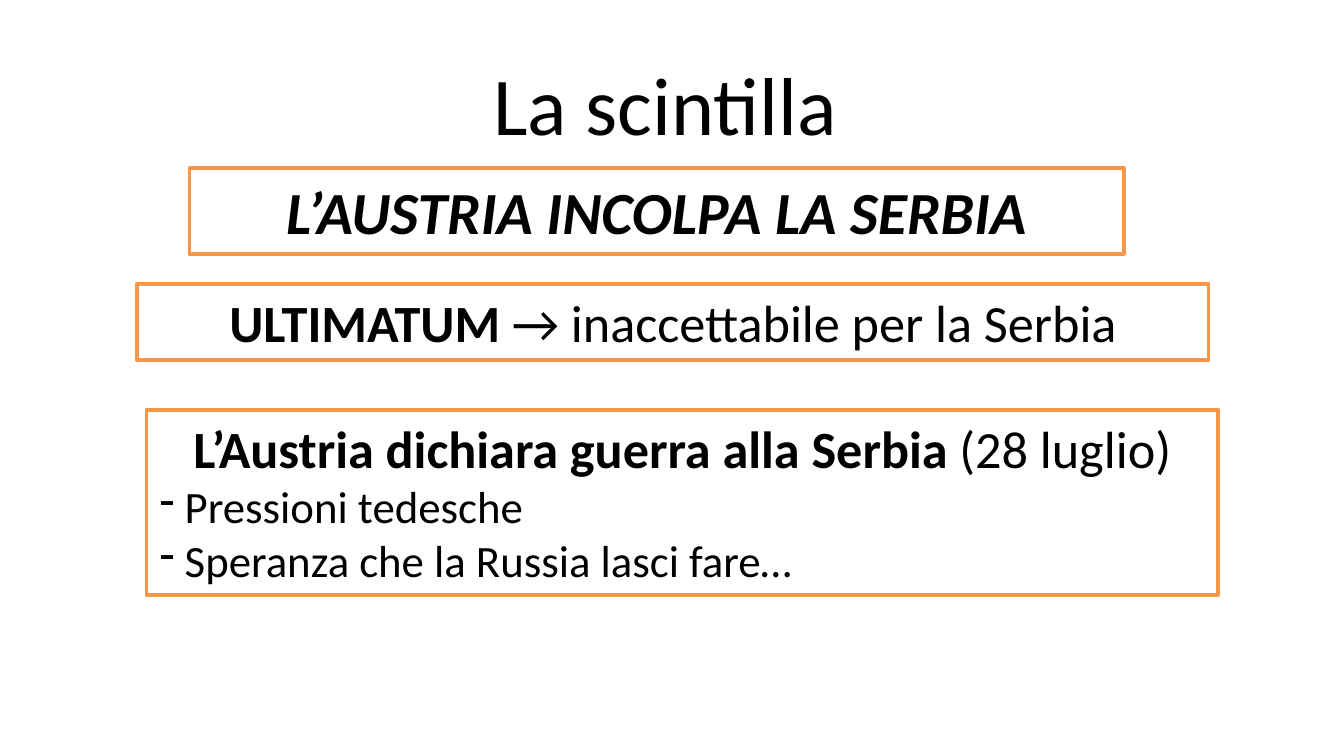
"""Build the slide "La scintilla": a title over three framed statements."""
from dataclasses import dataclass

import pptx
import pptx.dml.color
import pptx.enum.shapes
import pptx.enum.text
import pptx.oxml.ns
import pptx.slide
import pptx.text.text
import pptx.util
from lxml import etree

Pt = pptx.util.Pt
Align = pptx.enum.text.PP_ALIGN
Anchor = pptx.enum.text.MSO_ANCHOR
Fit = pptx.enum.text.MSO_AUTO_SIZE
BLACK = pptx.dml.color.RGBColor(0x00, 0x00, 0x00)
WHITE = pptx.dml.color.RGBColor(0xFF, 0xFF, 0xFF)
ORANGE = pptx.dml.color.RGBColor(0xF7, 0x96, 0x46)


@dataclass(frozen=True)
class Run:
    text: str
    size: float
    bold: bool = False
    italic: bool = False


@dataclass(frozen=True)
class Line:
    runs: tuple[Run, ...]
    dash: bool = False


@dataclass(frozen=True)
class Box:
    left: float
    top: float
    width: float
    height: float
    lines: tuple[Line, ...]


TITLE = Box(50.4, 11.5, 612, 87, (Line((Run("La scintilla", 44),)),))
FRAMES = (
    Box(101.5, 90, 500.5, 46, (
        Line((Run("L’AUSTRIA INCOLPA LA SERBIA", 32, True, True),)),
    )),
    Box(73.5, 152, 574, 41, (
        Line((Run("ULTIMATUM ", 28, True),
              Run("→ inaccettabile per la Serbia", 28))),
    )),
    Box(78.5, 219.5, 574, 99.5, (
        Line((Run("L’Austria dichiara guerra alla Serbia ", 28, True),
              Run("(28 luglio)", 28))),
        Line((Run(" Pressioni tedesche", 24),), True),
        Line((Run(" Speranza che la Russia lasci fare…", 24),), True),
    )),
)


def add_dash(para: pptx.text.text._Paragraph) -> None:
    """Give a paragraph a dash as its bullet."""
    props = para._p.get_or_add_pPr()
    mark = etree.SubElement(props, pptx.oxml.ns.qn("a:buChar"))
    mark.set("char", "-")


def write(frame: pptx.text.text.TextFrame, lines: tuple[Line, ...]) -> None:
    """Fill a text frame with formatted lines."""
    frame.word_wrap = True
    for index, line in enumerate(lines):
        para = frame.add_paragraph() if index else frame.paragraphs[0]
        para.alignment = Align.JUSTIFY if line.dash else Align.CENTER
        if line.dash:
            add_dash(para)
        for part in line.runs:
            run = para.add_run()
            run.text = part.text
            run.font.color.rgb = BLACK
            style = {"name": "Calibri", "size": Pt(part.size),
                     "bold": part.bold, "italic": part.italic}
            for key, value in style.items():
                setattr(run.font, key, value)


def area(box: Box) -> tuple[int, ...]:
    """Return the place and size of a box as lengths."""
    return tuple(Pt(n) for n in (box.left, box.top, box.width, box.height))


def draw_title(slide: pptx.slide.Slide, box: Box) -> None:
    """Draw the title as plain text."""
    frame = slide.shapes.add_textbox(*area(box)).text_frame
    frame.vertical_anchor = Anchor.MIDDLE
    write(frame, box.lines)


def draw_frame(slide: pptx.slide.Slide, box: Box) -> None:
    """Draw a white box with an orange border and its text."""
    kind = pptx.enum.shapes.MSO_SHAPE.RECTANGLE
    shape = slide.shapes.add_shape(kind, *area(box))
    shape.shadow.inherit = False
    shape.fill.solid()
    shape.fill.fore_color.rgb = WHITE
    shape.line.color.rgb = ORANGE
    shape.line.width = Pt(2)
    shape.text_frame.vertical_anchor = Anchor.TOP
    shape.text_frame.auto_size = Fit.SHAPE_TO_FIT_TEXT
    write(shape.text_frame, box.lines)


def main() -> None:
    """Build and save the slide."""
    deck = pptx.Presentation()
    deck.slide_width, deck.slide_height = Pt(720), Pt(405)
    slide = deck.slides.add_slide(deck.slide_layouts[6])
    draw_title(slide, TITLE)
    for box in FRAMES:
        draw_frame(slide, box)
    deck.save("out.pptx")


if __name__ == "__main__":
    main()
